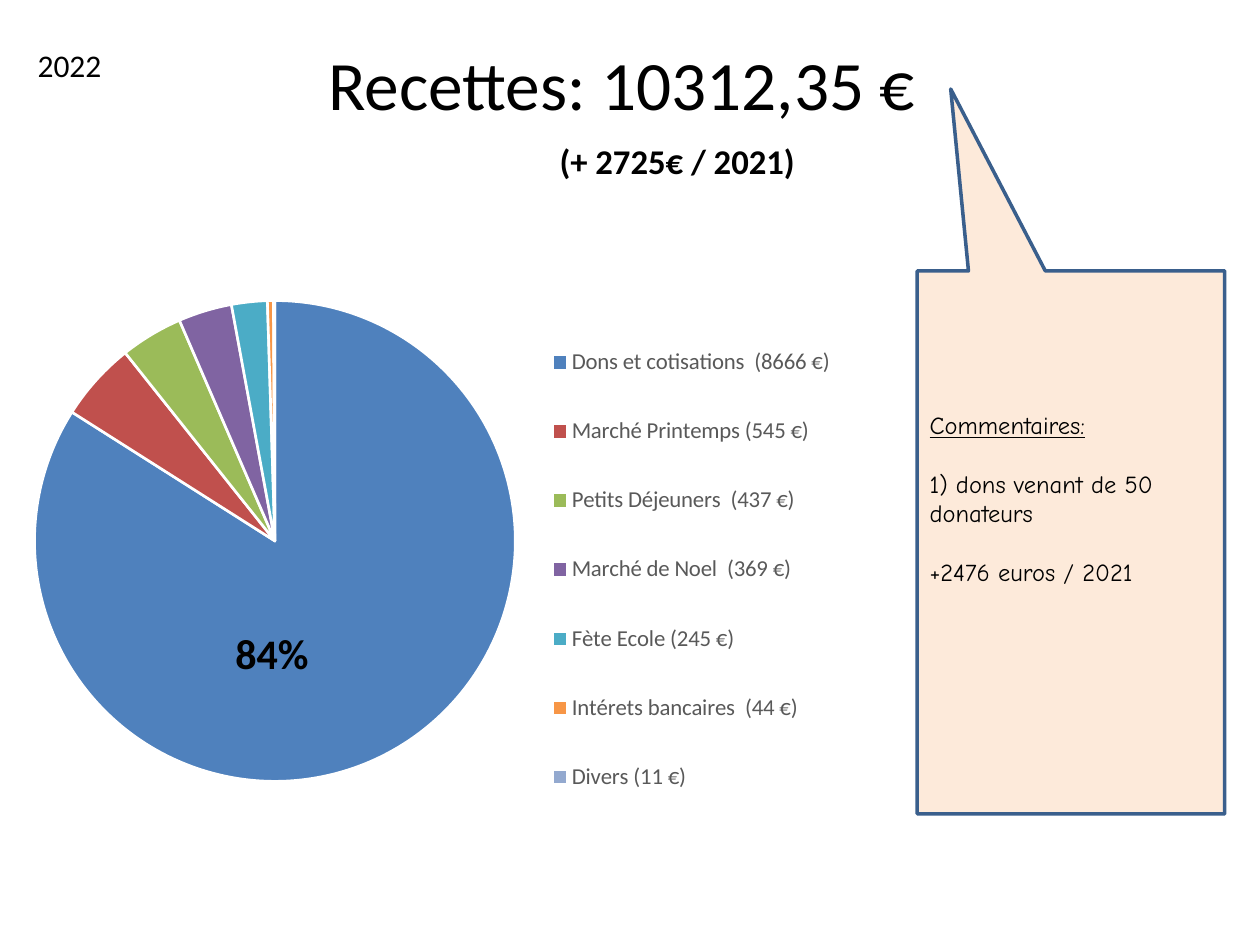
from lxml.etree import SubElement
from pptx import Presentation
from pptx.chart.data import CategoryChartData
from pptx.dml.color import RGBColor
from pptx.enum.chart import XL_CHART_TYPE as CT, XL_LEGEND_POSITION as LP
from pptx.enum.shapes import MSO_SHAPE as SHP
from pptx.enum.text import MSO_ANCHOR as ANC, PP_ALIGN as AL
from pptx.oxml.ns import qn
from pptx.util import Inches, Pt

BLACK = RGBColor(0x00, 0x00, 0x00)
WHITE = RGBColor(0xFF, 0xFF, 0xFF)
GREY = RGBColor(0x59, 0x59, 0x59)
PEACH = RGBColor(0xFD, 0xEA, 0xDA)
NAVY = RGBColor(0x3A, 0x5F, 0x8C)
SLICES = [
    ("Dons et cotisations  (8666 €)", 8666, RGBColor(0x4F, 0x81, 0xBD)),
    ("Marché Printemps (545 €)", 545, RGBColor(0xC0, 0x50, 0x4D)),
    ("Petits Déjeuners  (437 €)", 437, RGBColor(0x9B, 0xBB, 0x59)),
    ("Marché de Noel  (369 €)", 369, RGBColor(0x80, 0x64, 0xA2)),
    ("Fète Ecole (245 €)", 245, RGBColor(0x4B, 0xAC, 0xC6)),
    ("Intérets bancaires  (44 €)", 44, RGBColor(0xF7, 0x96, 0x46)),
    ("Divers (11 €)", 11, RGBColor(0x93, 0xA9, 0xCF)),
]


def write(p, text, color=BLACK, **fmt):
    r = p.add_run()
    r.text = text
    r.font.color.rgb = color
    for key, value in {"name": "Calibri", **fmt}.items():
        setattr(r.font, key, value)


def set_layout(parent, after, **shares):
    for old in parent.findall(qn("c:layout")):
        parent.remove(old)
    layout = SubElement(parent, qn("c:layout"))
    manual = SubElement(layout, qn("c:manualLayout"))
    for tag, val in shares.items():
        SubElement(manual, qn("c:" + tag)).set("val", str(val))
    if after is None:
        parent.insert(0, layout)
    else:
        after.addnext(layout)


prs = Presentation()
prs.slide_width, prs.slide_height = Inches(10), Inches(7.5)
s = prs.slides.add_slide(prs.slide_layouts[5])

title = s.shapes.title
title.left, title.top, title.width, title.height = map(Inches, (0.53, 0.2, 9, 1.25))
title.text_frame.vertical_anchor = ANC.MIDDLE
p = title.text_frame.paragraphs[0]
p.alignment = AL.CENTER
write(p, "Recettes: 10312,35 € ", size=Pt(39.6))
write(p, "\u00a0", size=Pt(19.8))
p.add_line_break()
SubElement(p._p.find(qn("a:br")), qn("a:rPr")).set("sz", "1980")
SubElement(p._p, qn("a:endParaRPr")).set("sz", "1980")

sp = s.shapes.add_shape(SHP.RECTANGULAR_CALLOUT, *map(Inches, (7.28, 2.15, 2.44, 4.31)))
sp.adjustments[0], sp.adjustments[1] = -0.391, -0.835
sp.shadow.inherit = False
sp.fill.solid()
sp.fill.fore_color.rgb = PEACH
sp.line.color.rgb = NAVY
sp.line.width = Pt(2)
tf = sp.text_frame
tf.word_wrap = True
tf.vertical_anchor = ANC.MIDDLE
tf.margin_bottom = Inches(0.75)
comments = ["Commentaires:", "1) dons venant de 50 donateurs", "+2476 euros / 2021"]
for i, text in enumerate(comments):
    p = tf.add_paragraph() if i else tf.paragraphs[0]
    p.alignment = AL.LEFT
    p.space_before = Pt(17 if i else 0)
    write(p, text, name="Comic Neue", size=Pt(14), underline=i == 0)

total = sum(amount for _, amount, _ in SLICES)
data = CategoryChartData()
data.categories = [label for label, _, _ in SLICES]
data.add_series("Series 1", [round(100 * amount / total, 1) for _, amount, _ in SLICES])
chart = s.shapes.add_chart(CT.PIE, *map(Inches, (-2.09, 2.08, 9.13, 5.09)), data).chart
chart.has_title = False
chart.font.name, chart.font.size = "Calibri", Pt(10)
chart.font.color.rgb = BLACK
chart.has_legend = True
legend = chart.legend
legend.position = LP.BOTTOM
legend.include_in_layout = False
legend.font.name, legend.font.size = "Calibri", Pt(13)
legend.font.color.rgb = GREY
for i, (_, _, color) in enumerate(SLICES):
    point = chart.plots[0].series[0].points[i].format
    point.fill.solid()
    point.fill.fore_color.rgb = color
    point.line.color.rgb = WHITE
    point.line.width = Pt(1.5)
area = chart._chartSpace.find(".//" + qn("c:plotArea"))
set_layout(area, None, layoutTarget="inner", xMode="edge", yMode="edge",
           x=0.259, y=0.06, w=0.418, h=0.75)
set_layout(legend._element, legend._element.find(qn("c:legendPos")),
           xMode="edge", yMode="edge", x=0.7, y=0.07, w=0.26, h=0.82)

labels = [
    ("(+ 2725€ / 2021)", (4.31, 0.96, 2.13, 0.63), 19.8, True, AL.CENTER, ANC.MIDDLE),
    ("2022", (0.2, 0.32, 1.89, 0.4), 18, False, AL.LEFT, ANC.TOP),
    ("84%", (1.77, 4.93, 0.94, 0.5), 24, True, AL.LEFT, ANC.TOP),
]
for text, box, size, bold, align, anchor in labels:
    tf = s.shapes.add_textbox(*map(Inches, box)).text_frame
    tf.word_wrap = True
    tf.vertical_anchor = anchor
    p = tf.paragraphs[0]
    p.alignment = align
    write(p, text, size=Pt(size), bold=bold)

prs.save("out.pptx")
